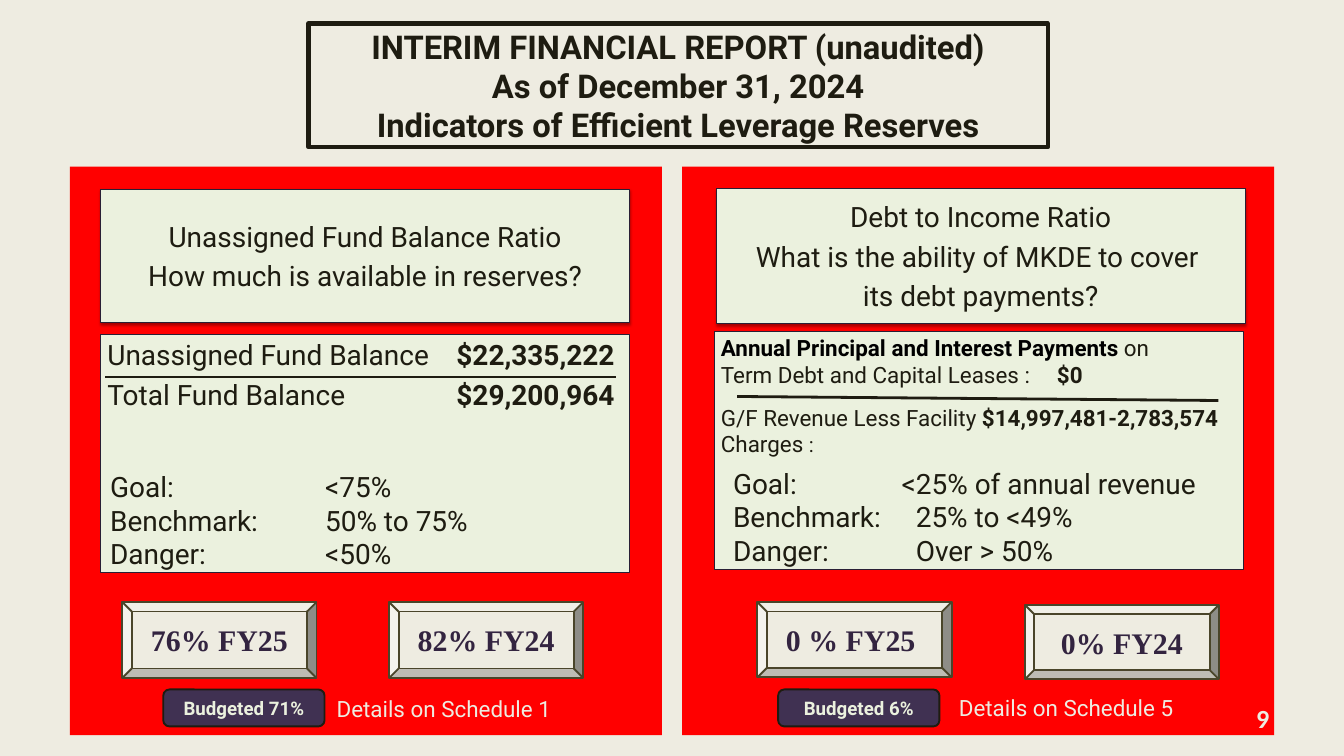
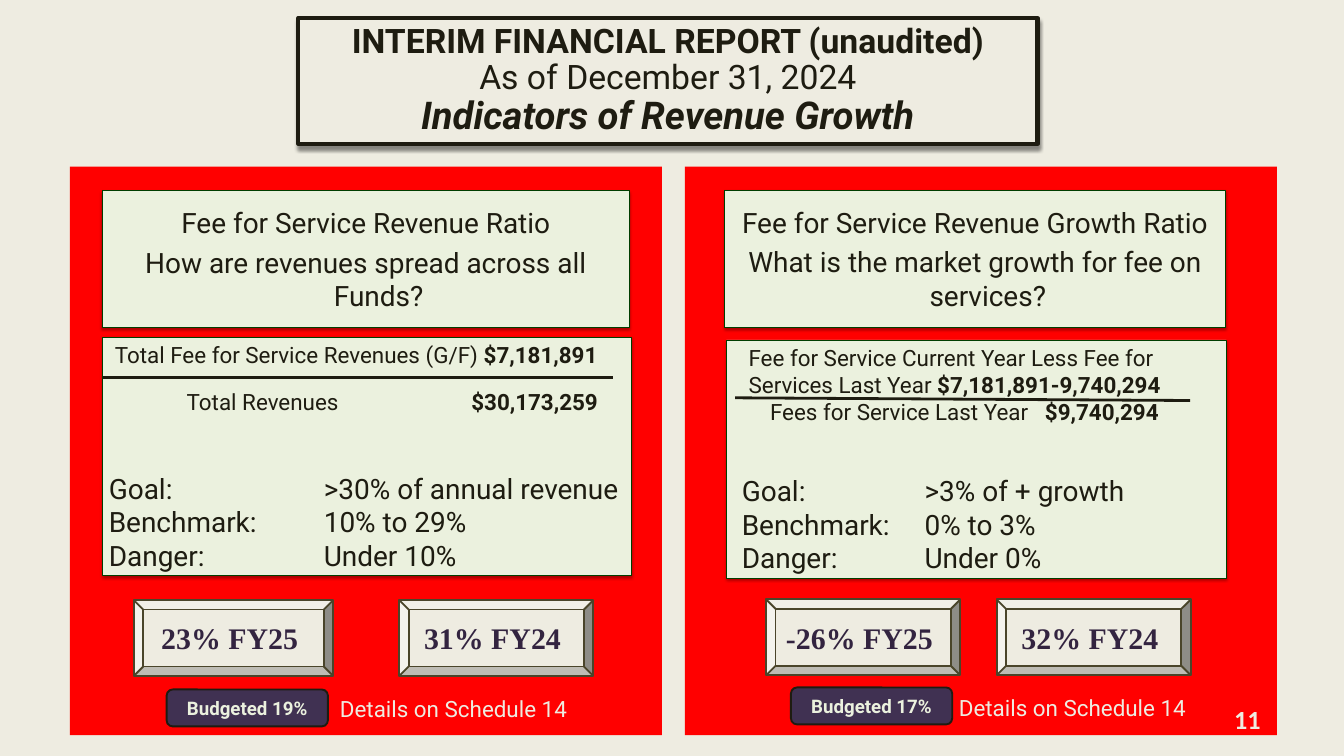
"""Build two slides of financial indicators, each with two red panels of ratios."""
from lxml import etree
from pptx import Presentation
from pptx import util as u
from pptx.dml.color import RGBColor
from pptx.enum import shapes, text
from pptx.oxml.ns import qn

PX = 9144
CREAM = RGBColor(0xEE, 0xEC, 0xE1)
RED = RGBColor(0xFF, 0x00, 0x00)
MINT = RGBColor(0xEB, 0xF1, 0xDE)
INK = RGBColor(0x1E, 0x1C, 0x11)
PLUM = RGBColor(0x29, 0x1F, 0x35)
GREEN = RGBColor(0x00, 0x3E, 0x00)
BROWN = RGBColor(0x4A, 0x45, 0x2A)
GRAPE = RGBColor(0x33, 0x24, 0x40)
VIOLET = RGBColor(0x40, 0x31, 0x52)
BLACK = RGBColor(0x00, 0x00, 0x00)
SOFT = (35, 3.1, 1.8)
DEEP = (43, 4, 4)
LEFT, MID, RIGHT = text.PP_ALIGN.LEFT, text.PP_ALIGN.CENTER, text.PP_ALIGN.RIGHT
RECT = shapes.MSO_SHAPE.RECTANGLE
ROUND = shapes.MSO_SHAPE.ROUNDED_RECTANGLE
BEVEL = shapes.MSO_SHAPE.BEVEL


def paint(shp, fill, line=None, width=0.75, shade=None):
    """Set fill, outline and an optional (alpha, blur, distance) shadow."""
    if fill is None:
        shp.fill.background()
    else:
        shp.fill.solid()
        shp.fill.fore_color.rgb = fill
    if line is None:
        shp.line.fill.background()
    else:
        shp.line.color.rgb = line
        shp.line.width = u.Pt(width)
    shp.shadow.inherit = False
    if shade:
        alpha, blur, dist = shade
        glow = etree.SubElement(
            shp._element.spPr.find(qn("a:effectLst")), qn("a:outerShdw"),
            blurRad=str(u.Pt(blur)), dist=str(u.Pt(dist)), dir="5400000", rotWithShape="0")
        tint = etree.SubElement(glow, qn("a:srgbClr"), val="000000")
        etree.SubElement(tint, qn("a:alpha"), val=str(alpha * 1000))


def write(shp, paras, size, color=INK, font="Roboto", align=LEFT, mid=False,
          pad=(10, 5, 10, 5), gaps=(), tabs=(), hang=0, lead=None):
    """Write paragraphs of (words, bold, size, italic, color) runs."""
    frame = shp.text_frame
    frame.word_wrap = True
    frame.auto_size = text.MSO_AUTO_SIZE.NONE
    frame.vertical_anchor = text.MSO_ANCHOR.MIDDLE if mid else text.MSO_ANCHOR.TOP
    frame.margin_left, frame.margin_top, frame.margin_right, frame.margin_bottom = (
        n * PX for n in pad)
    base = ("", False, size, False, color)
    for i, runs in enumerate(paras):
        para = frame.add_paragraph() if i else frame.paragraphs[0]
        para.alignment = align
        if lead:
            para.line_spacing = lead
        para.space_before = u.Pt(gaps[i] if i < len(gaps) else 0)
        props = para._p.get_or_add_pPr()
        if hang:
            props.set("marL", str(hang * PX))
            props.set("indent", str(-hang * PX))
        if i < len(tabs) and tabs[i]:
            stops = etree.SubElement(props, qn("a:tabLst"))
            for pos, side in tabs[i]:
                etree.SubElement(stops, qn("a:tab"), pos=str(pos * PX), algn=side)
        for part in runs:
            words, bold, points, slant, tone = (*part, *base[len(part):])
            run = para.add_run()
            run.text = words
            run.font.name = font
            run.font.size = u.Pt(points)
            run.font.bold = bold
            run.font.italic = slant
            run.font.color.rgb = tone


HEAD = "INTERIM FINANCIAL REPORT (unaudited)"
DATE = "As of December 31, 2024"
PAGES = [
    dict(
        title=[[(HEAD, True)], [(DATE, True)],
               [("Indicators of Efficient Leverage Reserves", True)]],
        at=(459, 35, 1100, 184), fill=None, shade=None, size=35.1, lead=None,
        edge=PLUM, glow=None, page="9", spot=(1847, 1045, 42, 47),
        panels=[
            dict(
                left=104, head=(150, 282, 787, 198),
                ask=["Unassigned Fund Balance Ratio", "How much is available in reserves?"],
                card=(150, 498, 787, 354), note=None, pad=(10, 5, 10, 5), size=30,
                ratio=[[("Unassigned Fund Balance\t",), ("$22,335,222", True)],
                       [("Total Fund Balance\t",), ("$29,200,964", True)]],
                gaps=(0, 6), tabs=[[(755, "r")]] * 2, bar=(157, 561, 916, 561),
                aims=(154, 694, 787, 162), marks=["<75%", "50% to 75%", "<50%"],
                stops=(320, 320, 320),
                years=[((182, 896, 289, 113), "76% FY25"), ((579, 896, 289, 113), "82% FY24")],
                plan=(243, 1026), share="71%", more=(491, 1030, 348, 50), part="1"),
            dict(
                left=1015, head=(1066, 281, 787, 200),
                ask=["Debt to Income Ratio", "What is the ability of MKDE to cover ",
                     "its debt payments?"],
                card=(1063, 493, 787, 354), note=None, pad=(10, 5, 10, 5), size=24,
                ratio=[[("Annual Principal and Interest Payments ", True, 24, False, BLACK),
                        ("on",)],
                       [("Term Debt and Capital Leases :\t",), ("$0", True)],
                       [("G/F Revenue Less Facility ",), ("$14,997,481-2,783,574", True)],
                       [("Charges ",), (":", False, 22)]],
                gaps=(0, 0, 16.4), tabs=[[], [(500, "l")]], bar=(1097, 590, 1813, 596),
                aims=(1081, 689, 750, 162),
                marks=["<25% of annual revenue", "25% to <49%", "Over > 50%"],
                stops=(251, 272, 272),
                years=[((1127, 896, 289, 112), "0 % FY25 "), ((1525, 900, 289, 111), "0% FY24")],
                plan=(1158, 1026), share="6%", more=(1417, 1028, 383, 50), part="5"),
        ]),
    dict(
        title=[[(HEAD, True)], [(DATE,)], [("Indicators of Revenue Growth", True, 41, True)]],
        at=(444, 27, 1100, 187), fill=CREAM, shade=DEEP, size=36.1, lead=0.9,
        edge=GREEN, glow=SOFT, page="11", spot=(1834, 1046, 42, 47),
        panels=[
            dict(
                left=104, head=(152, 284, 785, 203),
                ask=["Fee for Service Revenue Ratio",
                     "How are revenues spread across all Funds?"],
                card=(153, 502, 786, 354), note=None, pad=(10, 5, 10, 5), size=24,
                ratio=[[("\tTotal Fee for Service Revenues (G/F) ",), ("$7,181,891", True)],
                       [("\tTotal Revenues\t",), ("$30,173,259", True)]],
                gaps=(0, 22), tabs=[[(8, "l")], [(115, "l"), (727, "r")]],
                bar=(153, 562, 912, 562),
                aims=(152, 696, 785, 162),
                marks=[">30% of annual revenue", "10% to 29%", "Under 10%"],
                stops=(320, 320, 320),
                years=[((199, 893, 297, 113), "23% FY25 "), ((594, 893, 289, 113), "31% FY24 ")],
                plan=(248, 1026), share="19%", more=(496, 1030, 388, 50), part="14"),
            dict(
                left=1019, head=(1078, 283, 746, 204),
                ask=["Fee for Service Revenue Growth Ratio",
                     "What is the market growth for fee on services?"],
                card=(1081, 506, 744, 354), note=(1094, 507, 754, 131), pad=(20, 5, 10, 5),
                size=24,
                ratio=[[("Fee for Service Current Year Less Fee for Services Last Year ",),
                        ("$7,181,891-9,740,294", True)],
                       [("\tFees for Service Last Year\t",), ("$9,740,294", True)]],
                gaps=(), tabs=[[], [(32, "l"), (441, "l")]], bar=(1094, 592, 1771, 596),
                aims=(1094, 700, 706, 162),
                marks=[">3% of + growth", "0% to 3%", "Under 0%"],
                stops=(272, 272, 272),
                years=[((1140, 892, 289, 113), "-26% FY25 "), ((1483, 892, 289, 113), "32% FY24 ")],
                plan=(1177, 1023), share="17%", more=(1417, 1028, 383, 50), part="14"),
        ]),
]

deck = Presentation()
deck.slide_width, deck.slide_height = 2000 * PX, 1125 * PX
ground = deck.slide_master.background.fill
ground.solid()
ground.fore_color.rgb = CREAM

for page in PAGES:
    slide = deck.slides.add_slide(deck.slide_layouts[5])
    pool = slide.shapes
    title = pool.title
    title.left, title.top, title.width, title.height = (n * PX for n in page["at"])
    paint(title, page["fill"], INK, 4.5, page["shade"])
    write(title, page["title"], page["size"], align=MID, mid=True, pad=(0, 0, 0, 0),
          lead=page["lead"])

    for item in page["panels"]:
        panel = pool.add_shape(RECT, item["left"] * PX, 248 * PX, 881 * PX, 846 * PX)
        paint(panel, RED)

        head = pool.add_shape(RECT, *(n * PX for n in item["head"]))
        paint(head, MINT, page["edge"], shade=SOFT)
        write(head, [[(ask,)] for ask in item["ask"]], 30, align=MID, mid=True,
              gaps=(0, 6, 6), hang=38)

        card = pool.add_shape(RECT, *(n * PX for n in item["card"]))
        paint(card, MINT, page["edge"], shade=page["glow"])
        note = pool.add_textbox(*(n * PX for n in item["note"])) if item["note"] else card
        write(note, item["ratio"], item["size"], pad=item["pad"], gaps=item["gaps"],
              tabs=item["tabs"])

        bar = pool.add_connector(shapes.MSO_CONNECTOR.STRAIGHT, *(n * PX for n in item["bar"]))
        bar.line.color.rgb = INK
        bar.line.width = u.Pt(3)
        etree.SubElement(bar._element.spPr, qn("a:effectLst"))

        aims = pool.add_textbox(*(n * PX for n in item["aims"]))
        names = ("Goal:", "Benchmark:", "Danger:")
        write(aims, [[(f"{name}\t{mark}",)] for name, mark in zip(names, item["marks"])], 30,
              tabs=[[(stop, "l")] for stop in item["stops"]])

        for at, words in item["years"]:
            year = pool.add_shape(BEVEL, *(n * PX for n in at))
            paint(year, CREAM, BROWN, 2)
            write(year, [[(words, True)]], 32, GRAPE, "Times New Roman", MID, True)

        plan = pool.add_shape(ROUND, *(n * PX for n in (*item["plan"], 240, 55)))
        paint(plan, VIOLET, INK, 2)
        write(plan, [[(f"Budgeted {item['share']}", True)]], 20, MINT, align=MID, mid=True)

        more = pool.add_textbox(*(n * PX for n in item["more"]))
        write(more, [[(f"Details on Schedule {item['part']}",)]], 24, CREAM)

    spot = pool.add_textbox(*(n * PX for n in page["spot"]))
    write(spot, [[(page["page"], True)]], 28, CREAM, "Calibri", RIGHT, pad=(0, 0, 0, 0))

deck.save("out.pptx")
